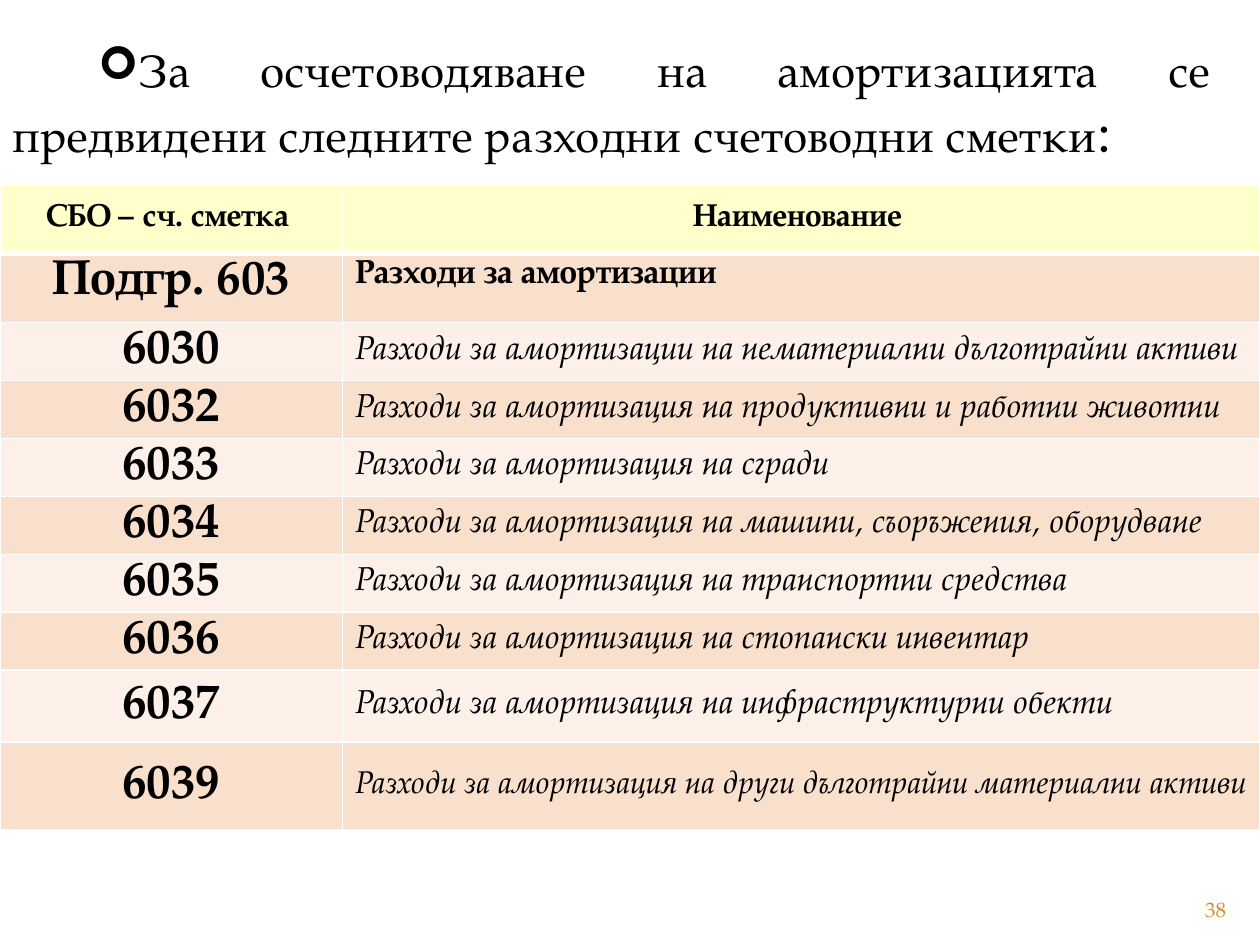
from lxml import etree
from pptx import Presentation
from pptx.dml.color import RGBColor
from pptx.enum.text import MSO_ANCHOR as ANCHOR, MSO_AUTO_SIZE as AUTO_SIZE, PP_ALIGN as ALIGN
from pptx.oxml.ns import qn
from pptx.util import Inches, Pt

FONT = "TeX Gyre Pagella"
HEADER, DARK, LIGHT = "FFFFCC", "F9E0CD", "FCF0E8"
BORDERS = {"lnL": 1, "lnR": 1, "lnT": 1, "lnB": 1}

HEADINGS = ["СБО – сч. сметка ", "Наименование "]
GROUP = ["Подгр. 603", "Разходи за амортизации"]
ACCOUNTS = [
    ("6030", "Разходи за амортизации на нематериални дълготрайни активи"),
    ("6032", "Разходи за амортизация на продуктивни и работни животни"),
    ("6033", "Разходи за амортизация на сгради"),
    ("6034", "Разходи за амортизация на машини, съоръжения, оборудване"),
    ("6035", "Разходи за амортизация на транспортни средства"),
    ("6036", "Разходи за амортизация на стопански инвентар"),
    ("6037", "Разходи за амортизация на инфраструктурни обекти"),
    ("6039", "Разходи за амортизация на други дълготрайни материални активи"),
]
COL_WIDTHS = [2.72, 7.28]
ROW_HEIGHTS = [0.54, 0.55] + [0.46] * 6 + [0.57, 0.7]


def rgb(color):
    return RGBColor.from_string(color)


class SlideBuilder:
    def __init__(self, prs):
        self.slide = prs.slides.add_slide(prs.slide_layouts[1])
        self.slide.shapes.title.element.getparent().remove(self.slide.shapes.title.element)

    def style(self, run, size, color="000000", bold=False, italic=False):
        font = run.font
        font.name, font.size, font.bold, font.italic = FONT, Pt(size), bold, italic
        font.color.rgb = rgb(color)

    def body(self, box, parts):
        """Fill the body placeholder with one bulleted paragraph of (text, size) runs."""
        sp = self.slide.placeholders[1]
        sp.left, sp.top, sp.width, sp.height = map(Inches, box)
        tf = sp.text_frame
        tf.auto_size = AUTO_SIZE.NONE
        tf.vertical_anchor = ANCHOR.TOP
        p = tf.paragraphs[0]
        p.alignment = ALIGN.JUSTIFY
        for text, size in parts:
            r = p.add_run()
            r.text = text
            self.style(r, size)
        pPr = p._p.get_or_add_pPr()
        pPr.set("marL", "0")
        pPr.set("indent", str(Inches(0.68)))
        before = etree.SubElement(pPr, qn("a:spcBef"))
        etree.SubElement(before, qn("a:spcPct"), val="20000")
        etree.SubElement(pPr, qn("a:buFont"), typeface="Wingdings")
        etree.SubElement(pPr, qn("a:buChar"), char="➢")

    def text(self, box, text, size, color, align):
        tf = self.slide.shapes.add_textbox(*map(Inches, box)).text_frame
        tf.word_wrap = True
        tf.vertical_anchor = ANCHOR.MIDDLE
        p = tf.paragraphs[0]
        p.text, p.alignment = text, align
        self.style(p.runs[0], size, color)

    def table(self, left, top, widths, heights):
        box = map(Inches, (left, top, sum(widths), sum(heights)))
        table = self.slide.shapes.add_table(len(heights), len(widths), *box).table
        for col, width in zip(table.columns, widths):
            col.width = Inches(width)
        for row, height in zip(table.rows, heights):
            row.height = Inches(height)
        return table

    def cell(self, cell, text, size, fill, align=ALIGN.LEFT, anchor=ANCHOR.MIDDLE,
             borders=BORDERS, bold=False, italic=False):
        p = cell.text_frame.paragraphs[0]
        p.text, p.alignment = text, align
        self.style(p.runs[0], size, bold=bold, italic=italic)
        cell.vertical_anchor = anchor
        tcPr = cell._tc.get_or_add_tcPr()
        for side, width in borders.items():
            ln = etree.SubElement(tcPr, qn(f"a:{side}"), w=str(Pt(width)))
            solid = etree.SubElement(ln, qn("a:solidFill"))
            etree.SubElement(solid, qn("a:srgbClr"), val="FFFFFF")
        cell.fill.solid()
        cell.fill.fore_color.rgb = rgb(fill)


def main():
    prs = Presentation()
    prs.slide_width, prs.slide_height = Inches(10), Inches(7.5)
    s = SlideBuilder(prs)
    s.body((0, 0.28, 9.72, 7.09), [
        ("За осчетоводяване на амортизацията се предвидени следните "
         "разходни счетоводни сметки", 26),
        (":", 32),
    ])

    table = s.table(0, 1.47, COL_WIDTHS, ROW_HEIGHTS)
    for col, heading in enumerate(HEADINGS):
        s.cell(table.cell(0, col), heading, 18, HEADER, ALIGN.CENTER,
               borders={**BORDERS, "lnB": 3}, bold=True)
    group_borders = {**BORDERS, "lnT": 3}
    for col, (text, size, align) in enumerate(zip(GROUP, (28, 19), (ALIGN.CENTER, ALIGN.LEFT))):
        s.cell(table.cell(1, col), text, size, DARK, align, ANCHOR.TOP, group_borders, bold=True)
    for row, (number, name) in enumerate(ACCOUNTS, start=2):
        fill = DARK if row % 2 else LIGHT
        number_cell = table.cell(row, 0)
        number_cell.margin_left = number_cell.margin_right = number_cell.margin_top = Inches(0.01)
        number_cell.margin_bottom = 0
        s.cell(number_cell, number, 28, fill, ALIGN.CENTER, bold=True)
        name_size = 18 if number == "6039" else 19
        s.cell(table.cell(row, 1), name, name_size, fill, italic=True)

    s.text((9, 7.08, 0.83, 0.27), "38", 12, "D48F29", ALIGN.RIGHT)
    prs.save("out.pptx")


if __name__ == "__main__":
    main()
